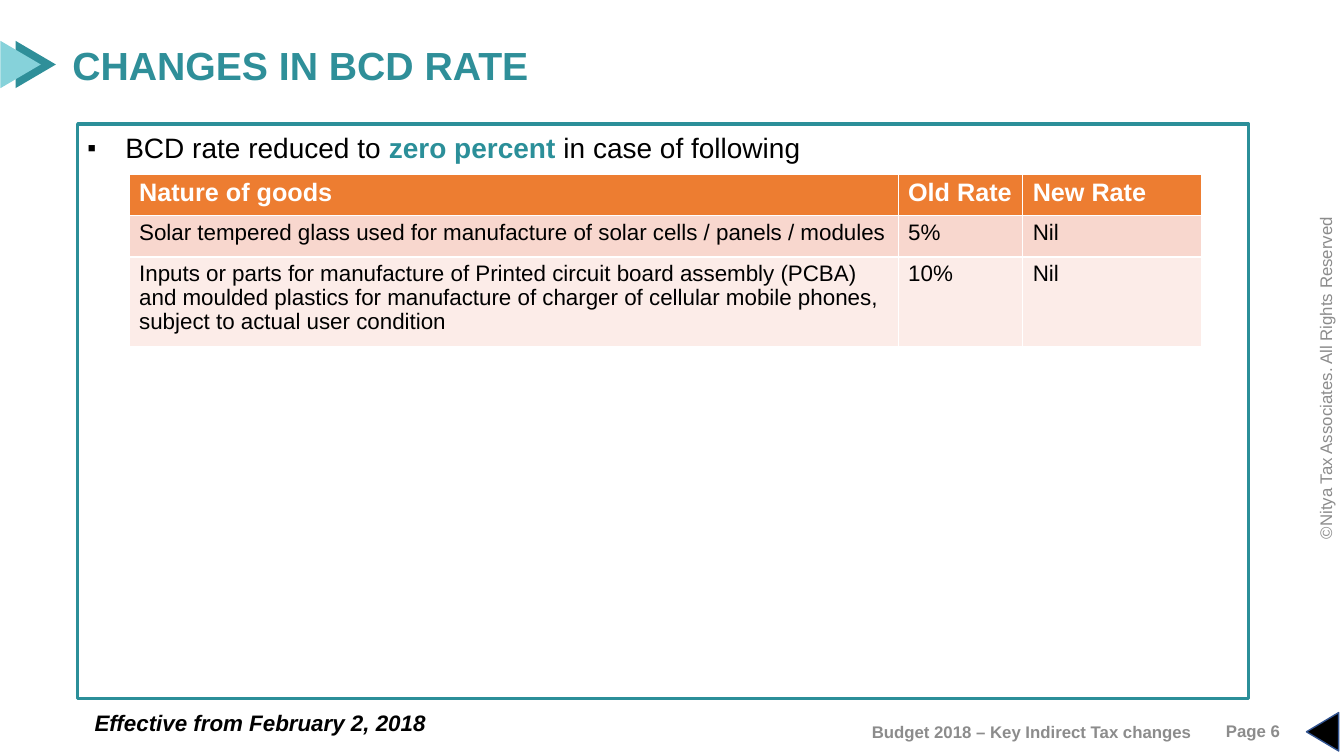
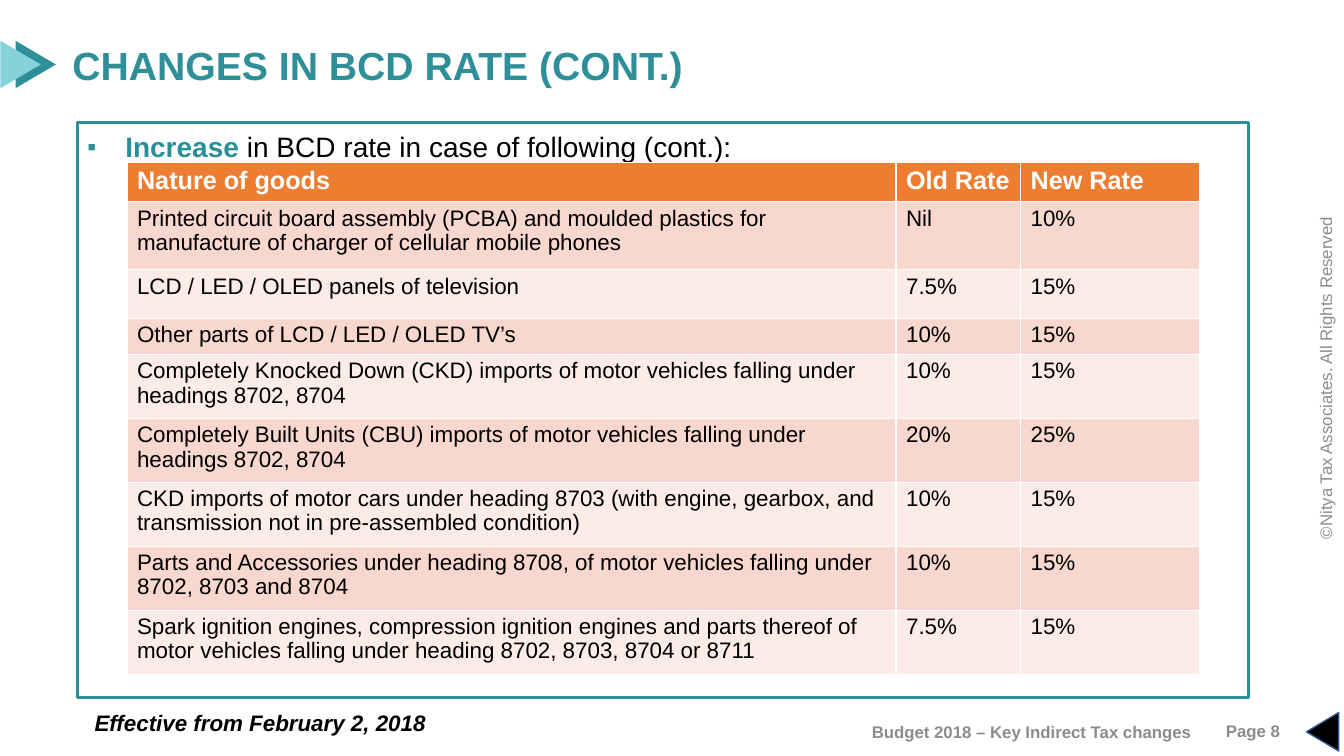
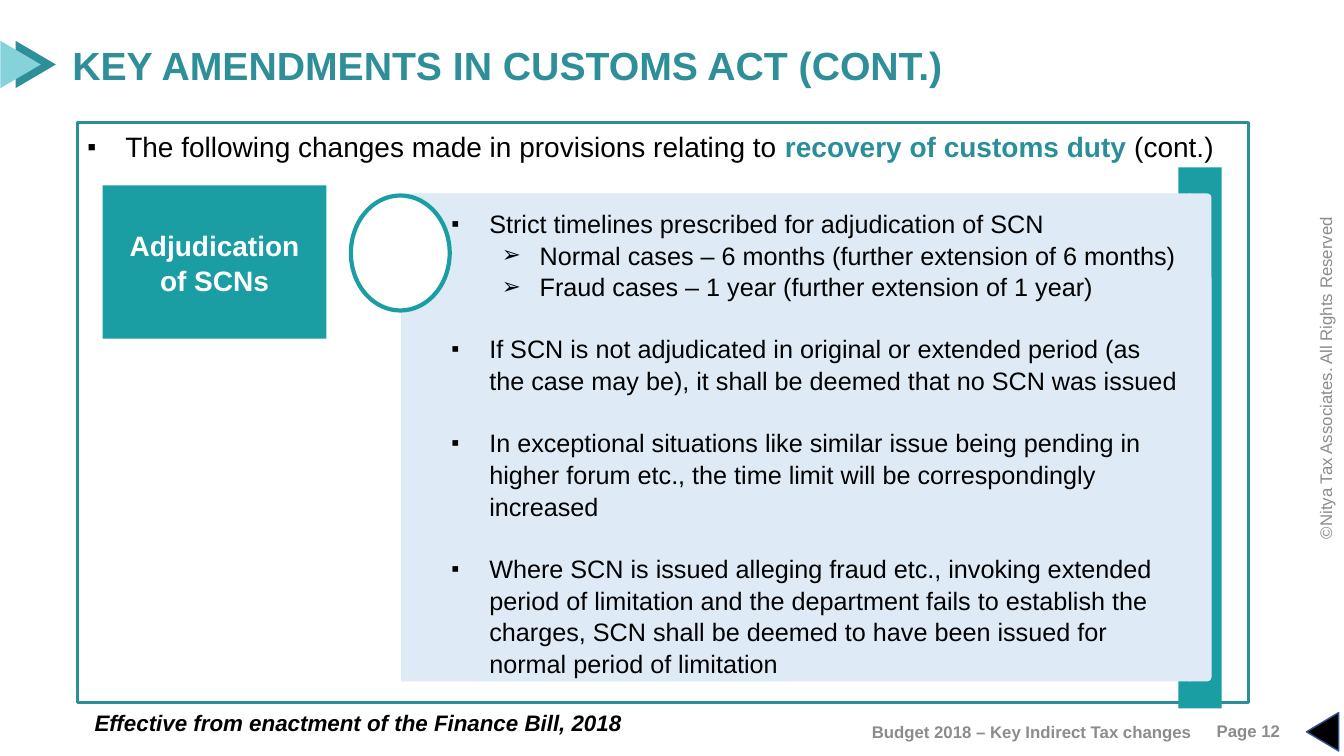
from dataclasses import dataclass

from lxml.etree import SubElement
from pptx import Presentation
from pptx.dml.color import RGBColor
from pptx.enum.shapes import MSO_SHAPE
from pptx.enum.text import MSO_ANCHOR, PP_ALIGN
from pptx.oxml.ns import qn
from pptx.util import Pt


@dataclass(frozen=True)
class Theme:
    font: str = "Arial"
    title_teal: str = "2F8F99"
    frame_teal: str = "2B8F99"
    pale_teal: str = "86D2DA"
    panel_teal: str = "1B9EA3"
    panel_blue: str = "DEEBF7"
    header_orange: str = "ED7D31"
    row_bands: tuple = ("F8D7CE", "FCECE8")
    arrow_edge: str = "325491"
    grey: str = "8C8C8C"
    black: str = "000000"
    white: str = "FFFFFF"
    title_size: int = 28
    lead_size: int = 20
    body_size: int = 18
    cell_size: int = 16
    footer_size: int = 12
    text_spacing: float = 1.05
    cell_spacing: float = 0.97


theme = Theme()


def place(slide, kind, box, fill=None, line=None, weight=1, anchor=MSO_ANCHOR.TOP):
    """Add a preset shape, or a text box when kind is None; box is in points."""
    box = [Pt(length) for length in box]
    if kind is None:
        shape = slide.shapes.add_textbox(*box)
    else:
        shape = slide.shapes.add_shape(kind, *box)
        shape.shadow.inherit = False
        if fill:
            shape.fill.solid()
            shape.fill.fore_color.rgb = RGBColor.from_string(fill)
        else:
            shape.fill.background()
        if line:
            shape.line.color.rgb = RGBColor.from_string(line)
            shape.line.width = Pt(weight)
        else:
            shape.line.fill.background()
    shape.text_frame.word_wrap = True
    shape.text_frame.vertical_anchor = anchor
    return shape


def write(paragraph, text, size, color, bold=False, italic=False,
          align=PP_ALIGN.LEFT, bullet=None, indent=27, spacing=None, before=0):
    """Fill a paragraph; in the text, parts between asterisks are bold teal."""
    if bullet:
        properties = paragraph._p.get_or_add_pPr()
        properties.set("marL", str(Pt(indent)))
        properties.set("indent", str(-Pt(27)))
        SubElement(properties, qn("a:buSzPct"), val="90000")
        SubElement(properties, qn("a:buFont"), typeface=theme.font)
        SubElement(properties, qn("a:buChar"), char=bullet)
    paragraph.alignment = align
    if spacing:
        paragraph.line_spacing = spacing
    if before:
        paragraph.space_before = Pt(before)
    paragraph.font.name = theme.font
    paragraph.font.size = Pt(size)
    paragraph.font.bold = bold
    paragraph.font.italic = italic
    paragraph.font.color.rgb = RGBColor.from_string(color)
    for position, part in enumerate(text.split("*")):
        if part:
            run = paragraph.add_run()
            run.text = part
            if position % 2:
                run.font.bold = True
                run.font.color.rgb = RGBColor.from_string(theme.frame_teal)


rate_header = ("Nature of goods", "Old Rate", "New Rate")
rate_widths = (549.3, 89, 128)
budget_day = "Effective from February 2, 2018"

# title, page, lead, frame top, frame height, effective date
pages = [
    ("CHANGES IN BCD RATE", 6,
     "BCD rate reduced to *zero percent* in case of following", 88.6, 410.4, budget_day),
    ("CHANGES IN BCD RATE (CONT.)", 8,
     "*Increase* in BCD rate in case of following (cont.):", 87.8, 410.4, budget_day),
    ("KEY AMENDMENTS IN CUSTOMS ACT (CONT.)", 12,
     "The following changes made in provisions relating to *recovery of customs duty *(cont.)",
     87.8, 414, "Effective from enactment of the Finance Bill, 2018"),
]

prs = Presentation()
prs.slide_width, prs.slide_height = Pt(960), Pt(540)
slides = []

for title, page, lead, frame_top, frame_height, effective in pages:
    slide = prs.slides.add_slide(prs.slide_layouts[6])
    slides.append(slide)

    rights = place(slide, None, (784.8, 255.6, 324, 28.8), anchor=MSO_ANCHOR.MIDDLE)
    rights.rotation = 270
    write(rights.text_frame.paragraphs[0], "©Nitya Tax Associates. All Rights Reserved",
          theme.footer_size, theme.grey, align=PP_ALIGN.CENTER)

    heading = place(slide, None, (44.6, 25.9, 645, 41))
    heading.text_frame.word_wrap = False
    write(heading.text_frame.paragraphs[0], title, theme.title_size, theme.title_teal, bold=True)

    for left, color in ((8.6, theme.title_teal), (-2.2, theme.pale_teal)):
        marker = place(slide, MSO_SHAPE.ISOSCELES_TRIANGLE, (left, 31.7, 33.8, 28.8), color)
        marker.rotation = 90
    back_arrow = place(slide, MSO_SHAPE.FLOWCHART_EXTRACT, (931, 511.2, 27.4, 23),
                       theme.black, theme.arrow_edge)
    back_arrow.rotation = 270

    frame = place(slide, MSO_SHAPE.RECTANGLE, (55.4, frame_top, 836.6, frame_height),
                  line=theme.frame_teal, weight=2.25)
    write(frame.text_frame.paragraphs[0], lead, theme.lead_size, theme.black,
          bullet="▪", spacing=theme.text_spacing)
    if lead.startswith("*"):
        frame.text_frame.paragraphs[0].runs[0].font.size = Pt(theme.lead_size)

    for text, box in ((f"Page {page}", (852.5, 507.6, 69, 28.8)),
                      ("Budget 2018 – Key Indirect Tax changes", (560.9, 508.3, 297.4, 28.8))):
        footer = place(slide, None, box, anchor=MSO_ANCHOR.MIDDLE)
        write(footer.text_frame.paragraphs[0], text, theme.footer_size, theme.grey,
              bold=True, align=PP_ALIGN.RIGHT)

    date_note = place(slide, None, (60.5, 501.8, 614, 28.8), anchor=MSO_ANCHOR.MIDDLE)
    write(date_note.text_frame.paragraphs[0], effective, theme.cell_size, theme.black,
          bold=True, italic=True)

reduced_rates = [
    ("Solar tempered glass used for manufacture of solar cells / panels / modules", "5%", "Nil"),
    ("Inputs or parts for manufacture of Printed circuit board assembly (PCBA) and moulded "
     "plastics for manufacture of charger of cellular mobile phones, subject to actual user "
     "condition", "10%", "Nil"),
]
increased_rates = [
    ("Printed circuit board assembly (PCBA) and moulded plastics for manufacture of charger "
     "of cellular mobile phones", "Nil", "10%"),
    ("LCD / LED / OLED panels of television", "7.5%", "15%"),
    ("Other parts of LCD / LED / OLED TV’s", "10%", "15%"),
    ("Completely Knocked Down (CKD) imports of motor vehicles falling under headings "
     "8702, 8704", "10%", "15%"),
    ("Completely Built Units (CBU) imports of motor vehicles falling under headings "
     "8702, 8704", "20%", "25%"),
    ("CKD imports of motor cars under heading 8703 (with engine, gearbox, and transmission "
     "not in pre-assembled condition)", "10%", "15%"),
    ("Parts and Accessories under heading 8708, of motor vehicles falling under 8702, 8703 "
     "and 8704", "10%", "15%"),
    ("Spark ignition engines, compression ignition engines and parts thereof of motor "
     "vehicles falling under heading 8702, 8703, 8704 or 8711", "7.5%", "15%"),
]

# slide, left, top, row heights, rates
rate_tables = [
    (slides[0], 92.2, 124.6, (29.5, 29.5, 64.1), reduced_rates),
    (slides[1], 90.7, 115.9, (28.1, 48.6, 34.6, 26) + (45.7,) * 5, increased_rates),
]
for slide, left, top, heights, rates in rate_tables:
    rate_table = slide.shapes.add_table(
        len(heights), len(rate_widths), Pt(left), Pt(top),
        Pt(sum(rate_widths)), Pt(sum(heights))).table
    for column, width in zip(rate_table.columns, rate_widths):
        column.width = Pt(width)
    for index, (height, entries) in enumerate(zip(heights, [rate_header] + rates)):
        rate_table.rows[index].height = Pt(height)
        is_header = index == 0
        band = theme.header_orange if is_header else theme.row_bands[(index - 1) % 2]
        for cell, entry in zip(rate_table.rows[index].cells, entries):
            cell.fill.solid()
            cell.fill.fore_color.rgb = RGBColor.from_string(band)
            write(cell.text_frame.paragraphs[0], entry,
                  theme.body_size if is_header else theme.cell_size,
                  theme.white if is_header else theme.black,
                  bold=is_header, spacing=theme.cell_spacing)

customs = slides[2]
place(customs, MSO_SHAPE.RECTANGLE, (841.7, 119.5, 31, 386.6), theme.panel_teal)
place(customs, MSO_SHAPE.RECTANGLE, (286.6, 138.2, 563.8, 348.5), theme.panel_blue)
place(customs, MSO_SHAPE.OVAL, (250.6, 139.7, 70.6, 82.1), theme.white, theme.panel_teal, 3)
place(customs, MSO_SHAPE.ROUNDED_RECTANGLE, (846.7, 138.2, 18.7, 348.5), theme.panel_blue)

# text, level, space before
provisions = [
    ("Strict timelines prescribed for adjudication of SCN", 0, 0),
    ("Normal cases – 6 months (further extension of 6 months)", 1, 0),
    ("Fraud cases – 1 year (further extension of 1 year)", 1, 0),
    ("If SCN is not adjudicated in original or extended period (as the case may be), it shall "
     "be deemed that no SCN was issued", 0, 21.7),
    ("In exceptional situations like similar issue being pending in higher forum etc., the "
     "time limit will be correspondingly increased", 0, 21.7),
    ("Where SCN is issued alleging fraud etc., invoking extended period of limitation and the "
     "department fails to establish the charges, SCN shall be deemed to have been issued for "
     "normal period of limitation", 0, 21.7),
]
details = place(customs, None, (315.4, 144, 535.7, 334)).text_frame
for index, (text, level, before) in enumerate(provisions):
    paragraph = details.add_paragraph() if index else details.paragraphs[0]
    paragraph.level = level
    write(paragraph, text, theme.body_size, theme.black, bullet="▪➢"[level],
          indent=27 + 36 * level, spacing=theme.text_spacing, before=before)

topic = place(customs, MSO_SHAPE.RECTANGLE, (73.4, 132.5, 159.8, 109.4), theme.panel_teal,
              anchor=MSO_ANCHOR.MIDDLE)
write(topic.text_frame.paragraphs[0], "Adjudication of SCNs", theme.lead_size, theme.white,
      bold=True, align=PP_ALIGN.CENTER, spacing=theme.text_spacing)

prs.save("out.pptx")
